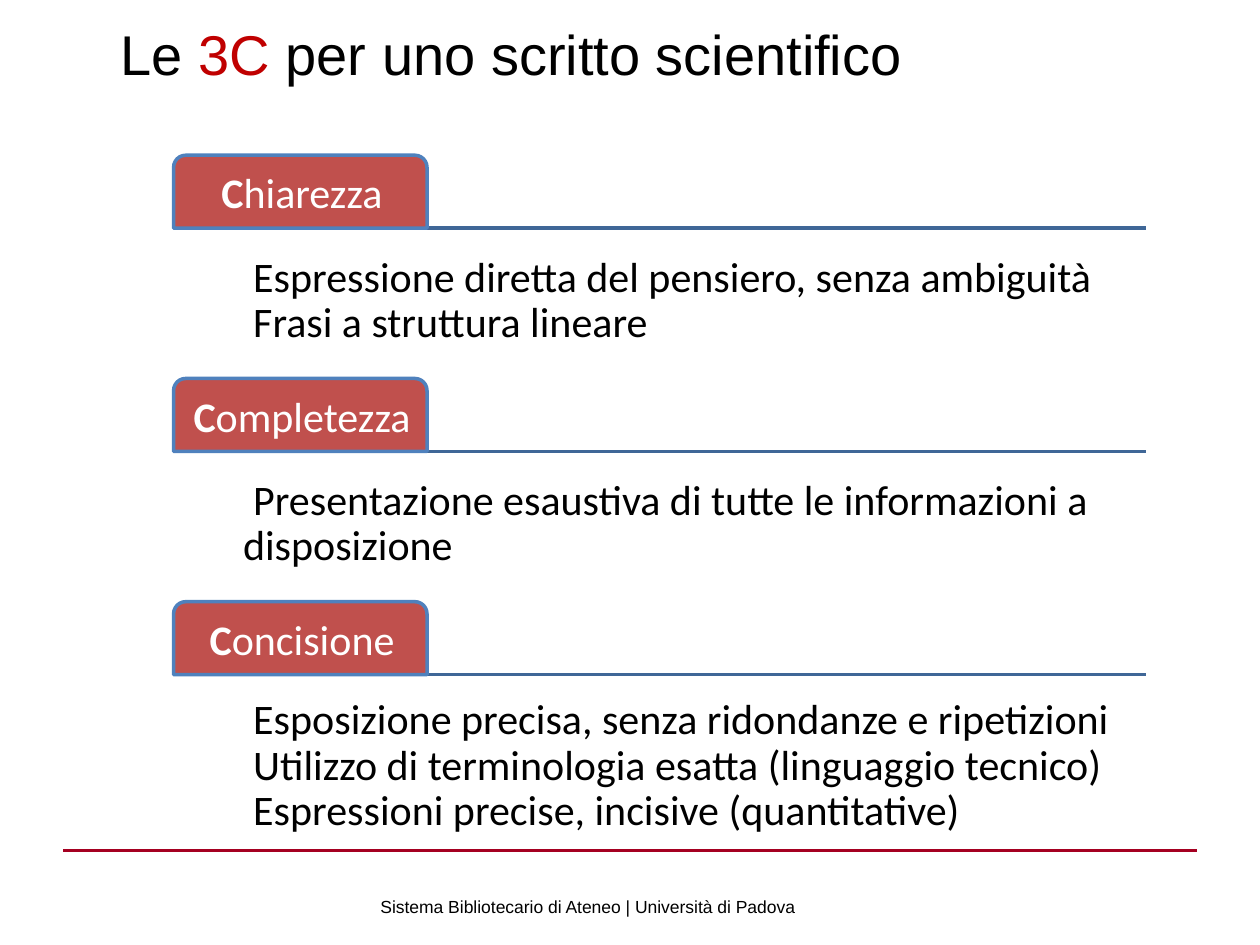
from pptx import Presentation
from pptx import util as u
from pptx.dml.color import RGBColor
from pptx.enum import shapes, text
from lxml import etree

TITLE = [("Le ", "000000"), ("3C ", "C00000"), ("per uno scritto scientifico", "000000")]
FOOT = [("Sistema Bibliotecario di Ateneo | Università di Padova", "000000")]
CARDS = [
    ("Chiarezza", 0.13, ["Espressione diretta del pensiero, senza ambiguità",
                         "Frasi a struttura lineare"]),
    ("Completezza", 0.13, ["Presentazione esaustiva di tutte le informazioni a disposizione"]),
    ("Concisione", 0.89, ["Esposizione precisa, senza ridondanze e ripetizioni",
                          "Utilizzo di terminologia esatta (linguaggio tecnico)",
                          "Espressioni precise, incisive (quantitative)"]),
]
LEFT, RIGHT, TOP, STEP = 3.5, 23.1, 3.13, 4.5
TAB_W, TAB_H, BODY_W, BODY_H = 5.11, 1.47, 19.6, 2.95
NS = "http://schemas.openxmlformats.org/drawingml/2006/main"


def color(code):
    return RGBColor.from_string(code)


def style(item, **vals):
    for key, val in vals.items():
        setattr(item, key, val)


def tag(parent, name, **attrs):
    return etree.SubElement(parent, f"{{{NS}}}{name}", **attrs)


def write(para, font, size, runs, bold=False):
    for i, (words, tint) in enumerate(runs):
        run = para.add_run()
        run.text = words
        style(run.font, name=font, size=u.Pt(size), bold=bold and i == 0)
        run.font.color.rgb = color(tint)


def rule(slide, x1, x2, y, tint, width):
    line = slide.shapes.add_connector(
        shapes.MSO_CONNECTOR.STRAIGHT, u.Cm(x1), u.Cm(y), u.Cm(x2), u.Cm(y))
    line.line.color.rgb = color(tint)
    line.line.width = u.Pt(width)
    tag(line._element.spPr, "effectLst")


def frame(shape, anchor, pads):
    sides = ("margin_left", "margin_top", "margin_right", "margin_bottom")
    style(shape.text_frame, word_wrap=True, vertical_anchor=anchor,
          **{side: u.Cm(pad) for side, pad in zip(sides, pads)})
    return shape.text_frame


def label(slide, spot, anchor, pads):
    return frame(slide.shapes.add_textbox(*map(u.Cm, spot)), anchor, pads)


def bullet(para):
    props = para._p.get_or_add_pPr()
    props.set("marL", str(u.Cm(1.27)))
    props.set("indent", str(u.Cm(-0.64)))
    tag(props, "buFont", typeface="Wingdings", pitchFamily="2", charset="2")
    tag(props, "buChar", char="·")


def tab(slide, y, word):
    box = slide.shapes.add_shape(shapes.MSO_SHAPE.ROUND_2_SAME_RECTANGLE,
                                 *map(u.Cm, (LEFT, y, TAB_W, TAB_H)))
    box.shadow.inherit = False
    box.adjustments[0], box.adjustments[1] = 0.167, 0
    box.fill.solid()
    box.fill.fore_color.rgb = color("C0504D")
    box.line.color.rgb = color("4F81BD")
    box.line.width = u.Pt(2)
    para = frame(box, text.MSO_ANCHOR.MIDDLE, (0.2, 0.2, 0.13, 0.13)).paragraphs[0]
    style(para, alignment=text.PP_ALIGN.CENTER, line_spacing=0.9)
    write(para, "Calibri", 24, [(word[0], "FFFFFF"), (word[1:], "FFFFFF")], True)


def body(slide, y, pad, items):
    area = label(slide, (LEFT, y, BODY_W, BODY_H), text.MSO_ANCHOR.MIDDLE,
                 (0.13, pad, 0.13, 0.13))
    for i, item in enumerate(items):
        para = area.add_paragraph() if i else area.paragraphs[0]
        style(para, level=1, line_spacing=0.9)
        bullet(para)
        write(para, "Calibri", 24, [(item, "000000")])


def main():
    deck = Presentation()
    style(deck, slide_width=u.Cm(25.4), slide_height=u.Cm(19.05))
    slide = deck.slides.add_slide(deck.slide_layouts[6])
    pads = (0.25, 0.13, 0.25, 0.13)
    rule(slide, 1.27, 24.13, 17.15, "A50021", 1.5)
    head = label(slide, (2.18, 0.53, 23.75, 1.6), text.MSO_ANCHOR.TOP, pads).paragraphs[0]
    head.line_spacing = 0.8
    write(head, "Arial", 32, TITLE)
    foot = label(slide, (7.42, 17.35, 9.96, 1.27), text.MSO_ANCHOR.BOTTOM, pads)
    write(foot.paragraphs[0], "Arial", 10, FOOT)
    for i, (word, pad, items) in enumerate(CARDS):
        y = TOP + i * STEP
        rule(slide, LEFT, RIGHT, y + TAB_H, "3F6797", 2)
        tab(slide, y, word)
        body(slide, y + TAB_H, pad, items)
    deck.save("out.pptx")


if __name__ == "__main__":
    main()
